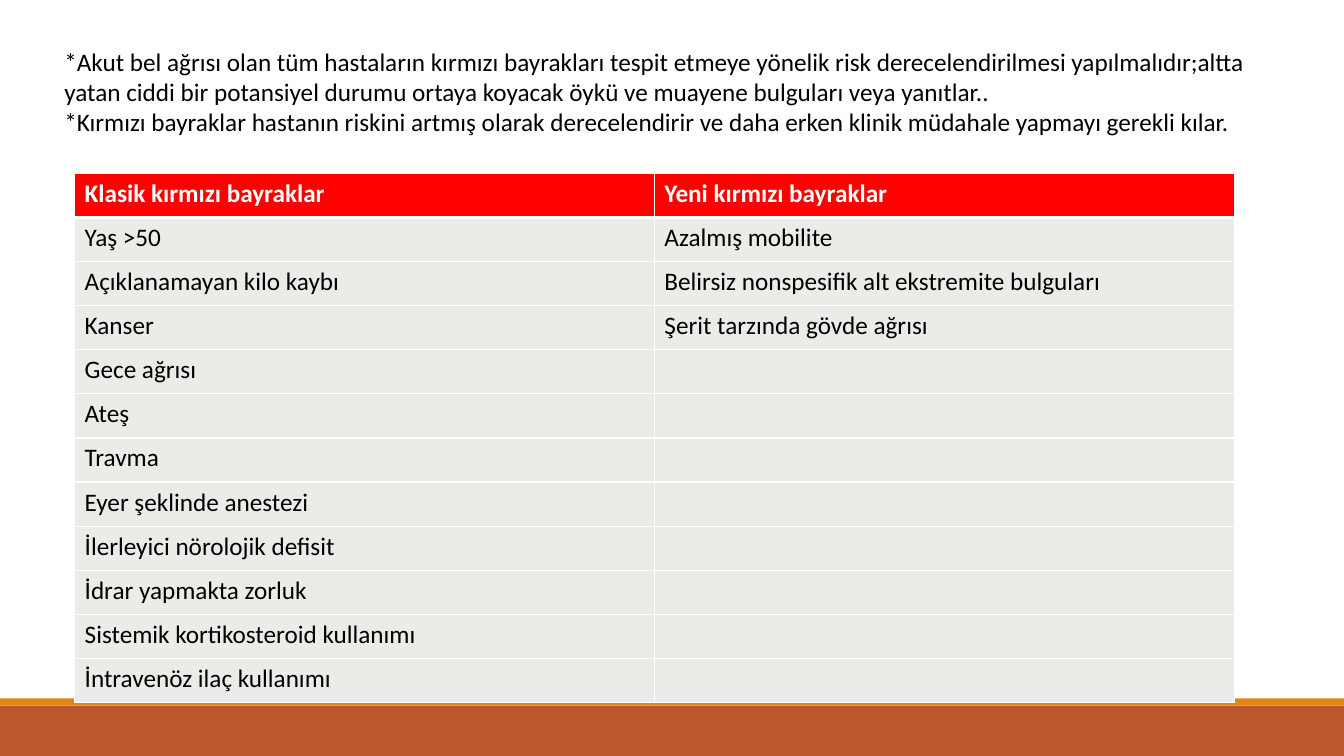
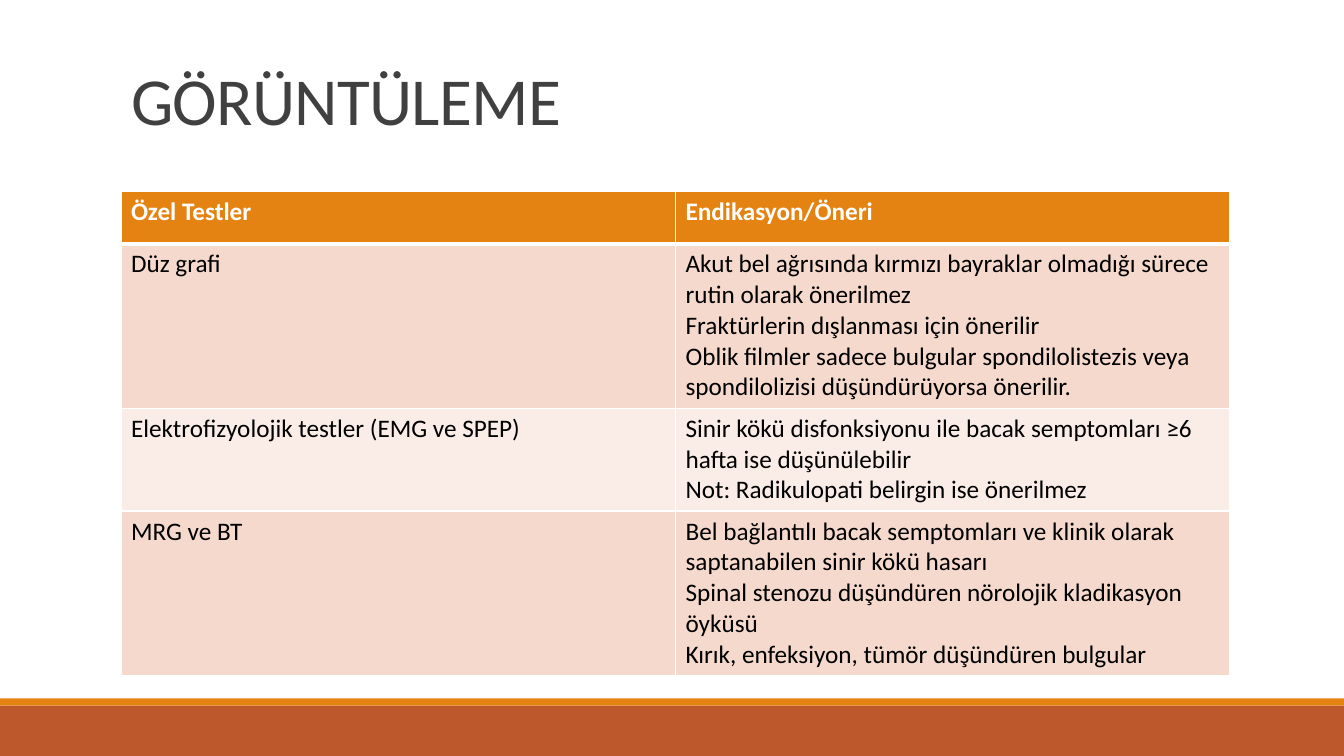
from dataclasses import dataclass

from lxml import etree
from pptx import Presentation
from pptx import util as u
from pptx.dml.color import RGBColor
from pptx.enum import shapes, text
from pptx.oxml.ns import qn


@dataclass(frozen=True)
class Theme:
    font: str = "Calibri"
    title_size: int = 48
    body_size: int = 18
    white: str = "FFFFFF"
    black: str = "000000"
    title: str = "404040"
    rust: str = "BD582C"
    orange: str = "E48312"
    red: str = "FF0000"
    sage: str = "EAECE7"
    peach: str = "F5D9CC"
    blush: str = "FAEDE7"
    thin: float = 1
    thick: float = 3


theme = Theme()


def style(para, size, color, bold=False):
    para.font.name = theme.font
    para.font.size = u.Pt(size)
    para.font.bold = bold
    para.font.color.rgb = RGBColor.from_string(color)


def add_grid(page, left, top, width, heights, rows, header_fill, body_fills):
    """Two equal columns, a coloured header row and cycling body fills."""
    frame = page.shapes.add_table(len(rows), 2, u.Inches(left), u.Inches(top),
                                  u.Inches(width), u.Inches(sum(heights)))
    table = frame.table
    for column in table.columns:
        column.width = u.Inches(width / 2)
    for row, height in zip(table.rows, heights):
        row.height = u.Inches(height)

    # White rules, heavier between header and body
    for index, properties in enumerate(frame.element.iter(qn("a:tcPr"))):
        row_number = index // 2
        for side in ("lnL", "lnR", "lnT", "lnB"):
            heavy = (row_number, side) in ((0, "lnB"), (1, "lnT"))
            width_pt = theme.thick if heavy else theme.thin
            rule = etree.SubElement(properties, qn(f"a:{side}"), w=str(u.Pt(width_pt)))
            fill = etree.SubElement(rule, qn("a:solidFill"))
            etree.SubElement(fill, qn("a:srgbClr"), val=theme.white)

    # Cell text and fills
    for row_number, row in enumerate(rows):
        header = row_number == 0
        fill = header_fill if header else body_fills[(row_number - 1) % len(body_fills)]
        for column_number, wording in enumerate(row):
            cell = table.cell(row_number, column_number)
            cell.fill.solid()
            cell.fill.fore_color.rgb = RGBColor.from_string(fill)
            cell.text = wording
            for para in cell.text_frame.paragraphs:
                style(para, theme.body_size, theme.white if header else theme.black, header)


deck = Presentation()
deck.slide_width, deck.slide_height = u.Inches(13.33), u.Inches(7.5)
TITLE_ONLY, BLANK = deck.slide_layouts[5], deck.slide_layouts[6]
flags_page = deck.slides.add_slide(BLANK)
imaging_page = deck.slides.add_slide(TITLE_ONLY)

# Footer bands on every page
for page in deck.slides:
    for top, height, color in ((7, 0.5, theme.rust), (6.93, 0.07, theme.orange)):
        band = page.shapes.add_shape(shapes.MSO_SHAPE.RECTANGLE, 0, u.Inches(top),
                                     deck.slide_width, u.Inches(height))
        band.shadow.inherit = False
        band.fill.solid()
        band.fill.fore_color.rgb = RGBColor.from_string(color)
        band.line.fill.background()

# Red flags: table
classic_flags = [
    "Yaş >50", "Açıklanamayan kilo kaybı", "Kanser", "Gece ağrısı", "Ateş", "Travma",
    "Eyer şeklinde anestezi", "İlerleyici nörolojik defisit", "İdrar yapmakta zorluk",
    "Sistemik kortikosteroid kullanımı", "İntravenöz ilaç kullanımı",
]
new_flags = [
    "Azalmış mobilite", "Belirsiz nonspesifik alt ekstremite bulguları",
    "Şerit tarzında gövde ağrısı",
]
new_flags += [""] * (len(classic_flags) - len(new_flags))
flag_rows = [("Klasik kırmızı bayraklar", "Yeni kırmızı bayraklar"),
             *zip(classic_flags, new_flags)]
add_grid(flags_page, 0.74, 1.72, 11.5, [5.25 / len(flag_rows)] * len(flag_rows),
         flag_rows, theme.red, [theme.sage])

# Red flags: introduction
box = flags_page.shapes.add_textbox(u.Inches(0.54), u.Inches(0.41),
                                    u.Inches(12.24), u.Inches(1.31))
box.text_frame.word_wrap = True
box.text_frame.text = (
    "*Akut bel ağrısı olan tüm hastaların kırmızı bayrakları tespit etmeye yönelik risk "
    "derecelendirilmesi yapılmalıdır;altta yatan ciddi bir potansiyel durumu ortaya koyacak "
    "öykü ve muayene bulguları veya yanıtlar..\n"
    "*Kırmızı bayraklar hastanın riskini artmış olarak derecelendirir ve daha erken klinik "
    "müdahale yapmayı gerekli kılar."
)
for para in box.text_frame.paragraphs:
    style(para, theme.body_size, theme.black)

# Imaging: title
title = imaging_page.shapes.title
title.left, title.top = u.Inches(1.2), u.Inches(0.31)
title.width, title.height = u.Inches(11), u.Inches(1.12)
title.text_frame.text = "GÖRÜNTÜLEME"
title.text_frame.auto_size = text.MSO_AUTO_SIZE.NONE
title.text_frame.vertical_anchor = text.MSO_ANCHOR.BOTTOM
para = title.text_frame.paragraphs[0]
para.alignment = text.PP_ALIGN.LEFT
para.line_spacing = 0.85
style(para, theme.title_size, theme.title)
for properties in title.element.iter(qn("a:defRPr")):
    properties.set("spc", "-50")

# Imaging: table
test_rows = [
    ("Özel Testler", "Endikasyon/Öneri"),
    ("Düz grafi",
     "Akut bel ağrısında kırmızı bayraklar olmadığı sürece rutin olarak önerilmez\n"
     "Fraktürlerin dışlanması için önerilir\n"
     "Oblik filmler sadece bulgular spondilolistezis veya spondilolizisi "
     "düşündürüyorsa önerilir."),
    ("Elektrofizyolojik testler (EMG ve SPEP)",
     "Sinir kökü disfonksiyonu ile bacak semptomları ≥6 hafta ise düşünülebilir\n"
     "Not: Radikulopati belirgin ise önerilmez"),
    ("MRG ve BT",
     "Bel bağlantılı bacak semptomları ve klinik olarak saptanabilen sinir kökü hasarı\n"
     "Spinal stenozu düşündüren nörolojik kladikasyon öyküsü\n"
     "Kırık, enfeksiyon, tümör düşündüren bulgular"),
]
add_grid(imaging_page, 1.2, 1.9, 11, [0.52, 1.63, 1.02, 1.63],
         test_rows, theme.orange, [theme.peach, theme.blush])

deck.save("out.pptx")
